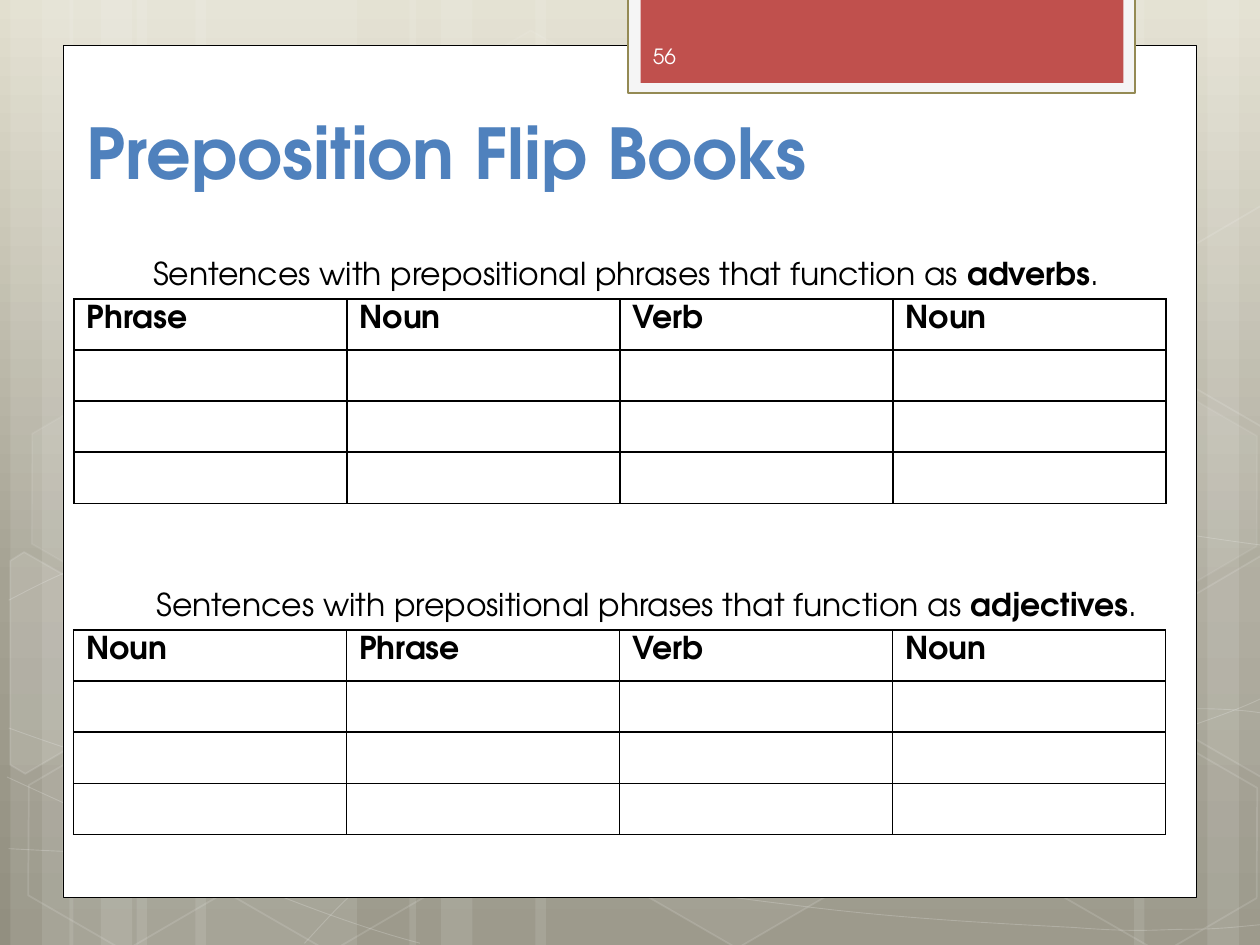
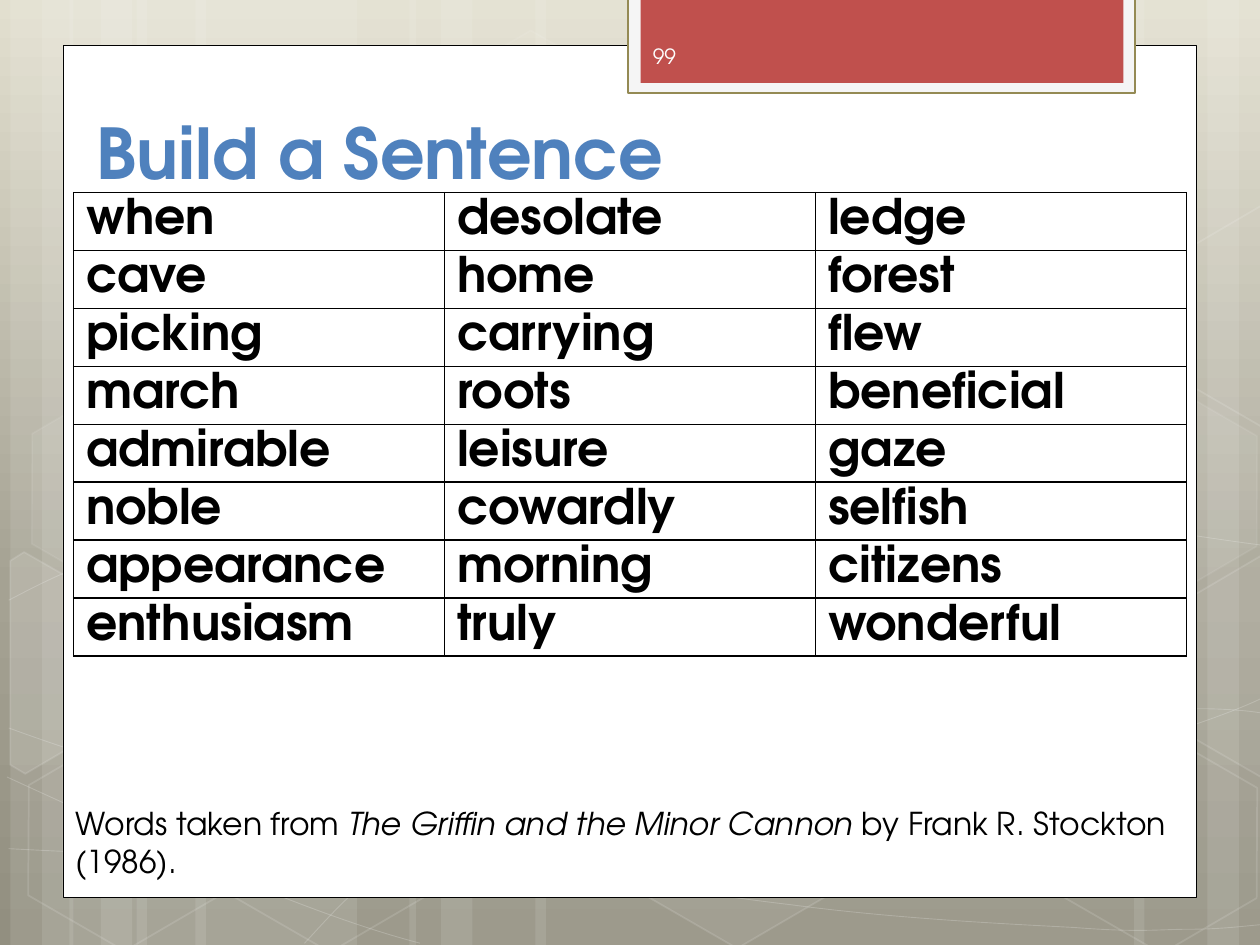
"""Build two grammar lesson slides on a shared hexagon backdrop."""
import copy
import dataclasses
import math

import lxml.etree
import pptx
import pptx.dml.color
import pptx.enum.shapes
import pptx.enum.text
import pptx.oxml.ns
import pptx.util

Pt = pptx.util.Pt
Shape = pptx.enum.shapes.MSO_SHAPE
Anchor = pptx.enum.text.MSO_ANCHOR
qn = pptx.oxml.ns.qn


@dataclasses.dataclass(frozen=True)
class Theme:
    font: str = "TeX Gyre Adventor"
    ink: str = "000000"
    white: str = "FFFFFF"
    title: str = "4F81BD"
    number: str = "FEFEFE"
    tab: str = "C0504D"
    tab_frame: str = "F5F5F5"
    tab_edge: str = "948A54"
    backdrop: tuple = ((0, "E2DFCF"), (0.62, "A5A293"), (1, "928F80"))
    title_size: int = 40
    word_size: int = 28
    body_size: int = 18
    number_size: int = 12


STREAKS = [(78, 126), (6, 36), (24, 60), (111.6, 126), (39.6, 36), (57.6, 60),
           (528, 126), (690, 36), (648, 60), (306, 222), (234, 36), (252, 60)]

CURVES = [
    [(5, 485), (44, 487), (83, 489), (137, 488), (191, 487), (258, 486), (330, 479),
     (402, 472), (504, 458), (570, 444), (636, 431), (703, 409), (725, 397)],
    [(5, 343), (26, 332), (47, 321), (87, 310), (128, 300), (186, 284), (250, 279),
     (317, 274), (392, 273), (471, 279), (550, 284), (682, 307), (725, 312)],
    [(4, 444), (91, 484), (178, 523), (240, 539)],
    [(5, 416), (27, 424), (50, 432), (92, 444), (134, 454), (197, 472), (257, 485),
     (317, 497), (392, 510), (452, 517), (512, 525), (576, 528), (614, 530),
     (652, 533), (662, 531), (680, 531), (699, 531), (712, 529), (725, 528)],
    [(174, 539), (187, 525), (200, 510), (217, 498), (235, 485), (259, 470), (279, 460),
     (300, 450), (312, 446), (338, 438), (364, 431), (413, 421), (438, 416),
     (464, 411), (467, 411), (490, 410), (512, 408), (547, 405), (572, 405),
     (597, 404), (638, 405), (638, 405), (653, 405), (670, 405), (686, 405),
     (699, 405), (711, 406), (718, 407), (724, 408), (722, 407), (724, 408)],
]

HEXAGONS = [(240.5, 26, 4, 8), (358, 424, 6, 12), (8, 425.5, None, 12), (10, 224.6, 7, 8),
            (125.3, 426.2, None, 12), (542.2, 326.2, 10, 12), (600.5, 427, None, 12),
            (600.5, 226, 7, 8)]

CUT_HEXAGONS = [
    ((25.9, 385.2), 10,
     [(5.8, 320.4), (13.7, 315.4), (69.1, 347), (68.4, 410.4), (14.4, 442.1), (5.8, 437)]),
    ((709.2, 374.4), 4,
     [(666.7, 349.2), (720.7, 317.5), (726.5, 321.1), (726.5, 441.4), (721.4, 444.2),
      (666.7, 412.6)]),
    ((709.2, 173.5), None,
     [(666.7, 149), (720.7, 117.4), (727.2, 121), (726.5, 241.2), (721.4, 244.1),
      (666.7, 212.4)]),
]

WORDS = [
    ["when", "desolate", "ledge"],
    ["cave", "home", "forest"],
    ["picking", "carrying", "flew"],
    ["march", "roots", "beneficial"],
    ["admirable", "leisure", "gaze"],
    ["noble", "cowardly", "selfish"],
    ["appearance", "morning", "citizens"],
    ["enthusiasm", "truly", "wonderful"],
]


def rgb(value):
    return pptx.dml.color.RGBColor.from_string(value)


def turn_back(points, center, degrees):
    cos, sin = math.cos(math.radians(degrees)), math.sin(math.radians(degrees))
    offsets = [(x - center[0], y - center[1]) for x, y in points]
    return [(center[0] + x * cos + y * sin, center[1] - x * sin + y * cos)
            for x, y in offsets]


class LessonDeck:
    def __init__(self, theme):
        self.theme = theme
        self.deck = pptx.Presentation()
        self.deck.slide_width, self.deck.slide_height = Pt(720), Pt(540)
        self.page = None

    def start_page(self, title, number, title_left):
        theme = self.theme
        self.page = self.deck.slides.add_slide(self.deck.slide_layouts[6])
        self.backdrop()
        self.shape(Shape.RECTANGLE, (36, 26, 648, 487), theme.white, edge=theme.ink, weight=0.5)
        self.shape(Shape.RECTANGLE, (359, -1.4, 289.6, 54.7), theme.tab_frame,
                   edge=theme.tab_edge, weight=1.25)
        self.shape(Shape.RECTANGLE, (366, -1.4, 276, 48.8), theme.tab)
        self.text((title_left, 24, 590, 90), [(title, "b")], theme.title_size,
                  theme.title, Anchor.BOTTOM)
        self.text((366, 17.6, 105, 28.8), [(number, "")], theme.number_size,
                  theme.number, Anchor.MIDDLE)

    def backdrop(self):
        fill = self.page.background.fill
        fill.gradient()
        fill.gradient_angle = 270
        stops = self.page.element.xpath(".//a:gsLst")[0]
        stops.insert(1, copy.deepcopy(stops[0]))
        for stop, (position, color) in zip(fill.gradient_stops, self.theme.backdrop):
            stop.position = position
            stop.color.rgb = rgb(color)
        white = self.theme.white
        for left, width in STREAKS:
            self.shape(Shape.RECTANGLE, (left, 0, width, 540), white, 10)
        for controls in CURVES:
            self.curve(controls)
        for left, top, alpha, edge_alpha in HEXAGONS:
            hexagon = self.shape(Shape.HEXAGON, (left, top, 126, 109.4),
                                 white if alpha else None, alpha, white, 1, edge_alpha)
            hexagon.adjustments[0] = 0.285
            hexagon.rotation = 30
        for center, alpha, points in CUT_HEXAGONS:
            cut = self.outline(turn_back(points, center, 30), True, alpha, 1, 12)
            cut.rotation = 30

    def paint(self, shape, fill, alpha=None, edge=None, weight=1, edge_alpha=None):
        shape.shadow.inherit = False
        if fill:
            shape.fill.solid()
            shape.fill.fore_color.rgb = rgb(fill)
        else:
            shape.fill.background()
        if edge:
            shape.line.color.rgb = rgb(edge)
            shape.line.width = Pt(weight)
        else:
            shape.line.fill.background()
        for place, percent in (("", alpha), ("a:ln/", edge_alpha)):
            if percent:
                color = shape.element.spPr.xpath(f"{place}a:solidFill/a:srgbClr")[0]
                lxml.etree.SubElement(color, qn("a:alpha"), val=str(percent * 1000))
        return shape

    def shape(self, kind, frame, fill, alpha=None, edge=None, weight=1, edge_alpha=None):
        shape = self.page.shapes.add_shape(kind, *map(Pt, frame))
        return self.paint(shape, fill, alpha, edge, weight, edge_alpha)

    def outline(self, points, closed, alpha, weight, edge_alpha):
        start, *rest = [(Pt(x), Pt(y)) for x, y in points]
        builder = self.page.shapes.build_freeform(*start)
        builder.add_line_segments(rest, close=closed)
        white = self.theme.white
        return self.paint(builder.convert_to_shape(), white if alpha else None, alpha,
                          white, weight, edge_alpha)

    def curve(self, controls):
        shape = self.outline(controls, False, None, 0.5, 20)
        lines = shape.element.xpath(".//a:lnTo")
        for first in range(0, len(lines), 3):
            bend = lxml.etree.Element(qn("a:cubicBezTo"))
            lines[first].addprevious(bend)
            for line in lines[first:first + 3]:
                bend.append(line[0])
                line.getparent().remove(line)

    def add_span(self, para, words, size, color, style=""):
        span = para.add_run()
        span.text = words
        span.font.name = self.theme.font
        span.font.size = Pt(size)
        span.font.color.rgb = rgb(color)
        span.font.bold = "b" in style
        span.font.italic = "i" in style

    def text(self, frame, spans, size, color, anchor=Anchor.TOP, wrap=True):
        box = self.page.shapes.add_textbox(*map(Pt, frame))
        box.text_frame.word_wrap = wrap
        box.text_frame.vertical_anchor = anchor
        for words, style in spans:
            self.add_span(box.text_frame.paragraphs[0], words, size, color, style)

    def body(self, frame, spans, wrap=True):
        self.text(frame, spans, self.theme.body_size, self.theme.ink, wrap=wrap)

    def table(self, left, top, column_width, row_height, rows, size, fill=None, bottom=3.6):
        count = len(rows[0])
        table = self.page.shapes.add_table(
            len(rows), count, Pt(left), Pt(top),
            Pt(column_width * count), Pt(row_height * len(rows))).table
        table.first_row = table.horz_banding = False
        for row, texts in enumerate(rows):
            for column, words in enumerate(texts):
                cell = table.cell(row, column)
                cell.margin_bottom = Pt(bottom)
                if fill:
                    cell.fill.solid()
                    cell.fill.fore_color.rgb = rgb(fill)
                else:
                    cell.fill.background()
                self.border(cell)
                para = cell.text_frame.paragraphs[0]
                if words:
                    self.add_span(para, words, size, self.theme.ink, "b")
                else:
                    para.font.size = Pt(size)

    def border(self, cell):
        properties = cell._tc.get_or_add_tcPr()
        for index, side in enumerate(("lnL", "lnR", "lnT", "lnB")):
            line = lxml.etree.Element(qn(f"a:{side}"), w=str(Pt(1)))
            solid = lxml.etree.SubElement(line, qn("a:solidFill"))
            lxml.etree.SubElement(solid, qn("a:srgbClr"), val=self.theme.ink)
            properties.insert(index, line)

    def flip_book(self, left, top, caption, function, headings):
        caption_left, caption_width = caption
        self.body((caption_left, top - 29, caption_width, 28.8),
                  [("Sentences with prepositional phrases that function as ", ""),
                   (function, "b"), (".", "")], wrap=False)
        rows = [headings] + [[""] * len(headings)] * 3
        self.table(left, top, 156, 29.2, rows, self.theme.body_size)


def main():
    lesson = LessonDeck(Theme())

    lesson.start_page("Preposition Flip Books", "56", 42.5)
    lesson.flip_book(42.3, 170.8, (80.4, 563), "adverbs", ["Phrase", "Noun", "Verb", "Noun"])
    lesson.flip_book(42, 360, (82.3, 582.5), "adjectives", ["Noun", "Phrase", "Verb", "Noun"])

    lesson.start_page("Build a Sentence", "99", 48)
    lesson.table(42, 110, 212, 33.07, WORDS, lesson.theme.word_size,
                 lesson.theme.white, bottom=-4.15)
    lesson.body((36, 456, 642, 51),
                [("Words taken from ", ""), ("The Griffin and the Minor Cannon", "i"),
                 (" by Frank R. Stockton (1986).", "")])

    lesson.deck.save("out.pptx")


if __name__ == "__main__":
    main()
